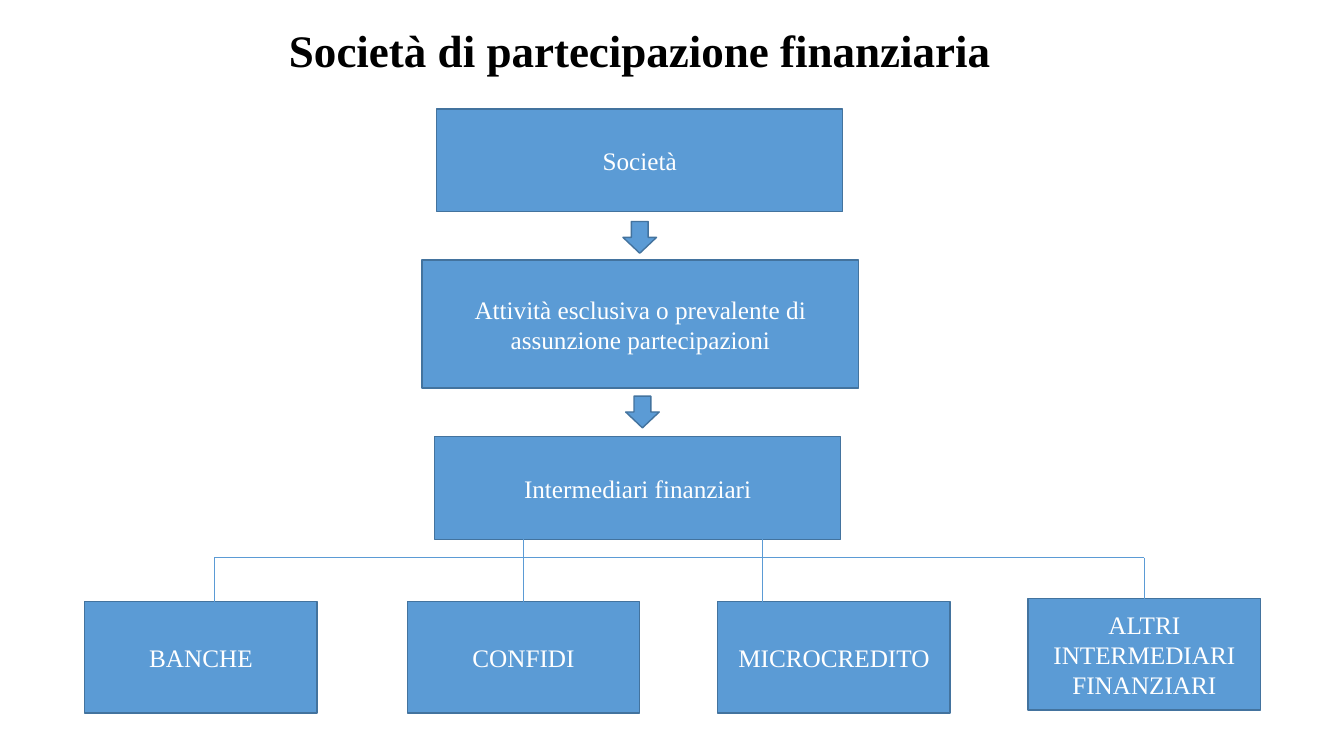
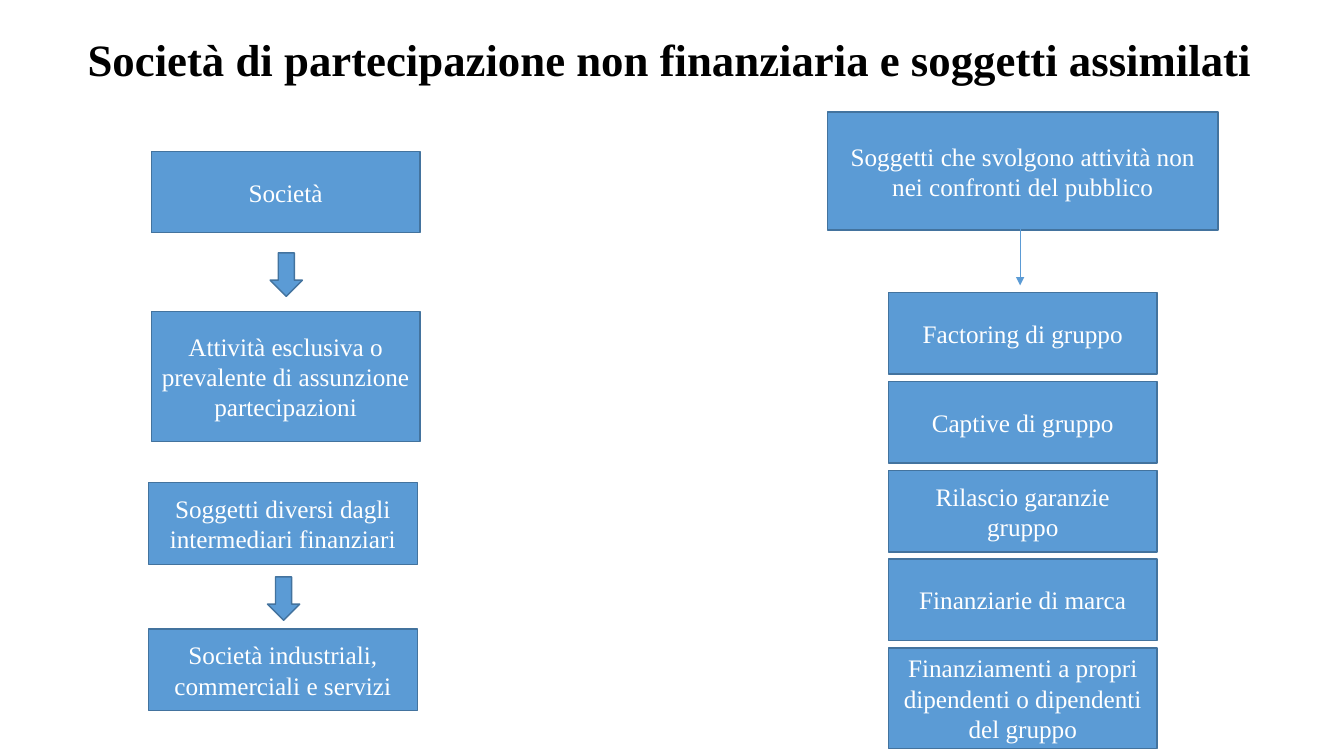
from lxml.etree import SubElement
from pptx import Presentation
from pptx.dml.color import RGBColor
from pptx.enum.shapes import MSO_CONNECTOR as Connector, MSO_SHAPE as Shape
from pptx.enum.text import MSO_ANCHOR as Anchor, PP_ALIGN as Align
from pptx.oxml.ns import qn
from pptx.util import Inches, Pt

WIDTH, HEIGHT = Inches(13.333), Inches(7.5)
FONT = "Times New Roman"
BLUE, EDGE, WHITE, BLACK = "5B9BD5", "43739E", "FFFFFF", "000000"


def color(value):
    return RGBColor.from_string(value)


def across(percent):
    return round(WIDTH * percent / 100)


def down(percent):
    return round(HEIGHT * percent / 100)


def frame(center, top, width, height):
    return across(center - width / 2), down(top), across(width), down(height)


def write(box, text, size=18, ink=WHITE, bold=False, spacing=1.0):
    box.text_frame.word_wrap = True
    box.text_frame.vertical_anchor = Anchor.MIDDLE
    para = box.text_frame.paragraphs[0]
    para.alignment = Align.CENTER
    para.line_spacing = spacing
    span = para.add_run()
    span.text = text
    span.font.name = FONT
    span.font.size = Pt(size)
    span.font.bold = bold
    span.font.color.rgb = color(ink)


def add_title(page, text, center, top, width, size=32):
    box = page.shapes.add_textbox(*frame(center, top, width, 11.3))
    write(box, text, size=size, ink=BLACK, bold=True, spacing=0.9)


def add_block(page, kind, center, top, width, height):
    block = page.shapes.add_shape(kind, *frame(center, top, width, height))
    block.shadow.inherit = False
    block.fill.solid()
    block.fill.fore_color.rgb = color(BLUE)
    block.line.color.rgb = color(EDGE)
    block.line.width = Pt(1)
    return block


def add_box(page, text, center, top, width=20, height=10.8):
    write(add_block(page, Shape.RECTANGLE, center, top, width, height), text)


def add_arrow(page, center, top, width, height):
    add_block(page, Shape.DOWN_ARROW, center, top, width, height)


def add_line(page, x1, y1, x2, y2, arrow=False):
    line = page.shapes.add_connector(
        Connector.STRAIGHT, across(x1), down(y1), across(x2), down(y2))
    line.line.color.rgb = color(BLUE)
    line.line.width = Pt(0.5)
    if arrow:
        SubElement(line.line._get_or_add_ln(), qn("a:tailEnd"), type="triangle")
    SubElement(line._element.spPr, qn("a:effectLst"))


def build_financial(page):
    chain = [
        ("Società", 47.6, 14.4, 30.2, 13.6),
        ("Attività esclusiva o prevalente di assunzione partecipazioni",
         47.65, 34.4, 32.5, 16.95),
        ("Intermediari finanziari", 47.45, 57.75, 30.2, 13.6),
    ]
    for text, *place in chain:
        add_box(page, text, *place)
    for center, top in [(47.6, 29.3), (47.8, 52.4)]:
        add_arrow(page, center, top, 2.5, 4.2)

    bus, chain_end = 73.75, 67.75
    leaves = [
        ("BANCHE", 14.95, 79.6, 15.95, bus),
        ("CONFIDI", 38.95, 79.6, 38.95, chain_end),
        ("MICROCREDITO", 62.05, 79.6, 56.7, chain_end),
        ("ALTRI INTERMEDIARI FINANZIARI", 85.15, 79.2, 85.15, bus),
    ]
    for text, center, top, drop, start in leaves:
        add_box(page, text, center, top, 17.3, 14.7)
        add_line(page, drop, start, drop, top)
    add_line(page, leaves[0][3], bus, leaves[-1][3], bus)
    add_title(page, "Società di partecipazione finanziaria", 47.6, 1.35, 75, size=32.2)


def build_non_financial(page):
    companies = [
        ("Società", 21.25, 20, 10.8),
        ("Attività esclusiva o prevalente di assunzione partecipazioni",
         21.25, 41.2, 17.2),
        ("Soggetti diversi dagli intermediari finanziari", 21.05, 63.85, 10.8),
        ("Società industriali, commerciali e servizi", 21.05, 83.2, 10.8),
    ]
    for text, center, top, height in companies:
        add_box(page, text, center, top, height=height)
    for center, top in [(21.3, 33.45), (21.1, 76.3)]:
        add_arrow(page, center, top, 2.4, 5.75)

    middle = 76.1
    add_box(page, "Soggetti che svolgono attività non nei confronti del pubblico",
            middle, 14.8, 29.05, 15.65)
    activities = [
        ("Factoring di gruppo", 10.8),
        ("Captive di gruppo", 10.8),
        ("Rilascio garanzie gruppo", 10.8),
        ("Finanziarie di marca", 10.8),
        ("Finanziamenti a propri dipendenti o dipendenti del gruppo", 13.3),
    ]
    for row, (text, height) in enumerate(activities):
        add_box(page, text, middle, 38.7 + 11.75 * row, height=height)
    add_title(page, "Società di partecipazione non finanziaria e soggetti assimilati",
              49.85, 2.55, 93.1)
    add_line(page, 75.9, 29.3, 75.9, 37.75, arrow=True)


def main():
    deck = Presentation()
    deck.slide_width, deck.slide_height = WIDTH, HEIGHT
    for build in (build_financial, build_non_financial):
        build(deck.slides.add_slide(deck.slide_layouts[6]))
    deck.save("out.pptx")


if __name__ == "__main__":
    main()
